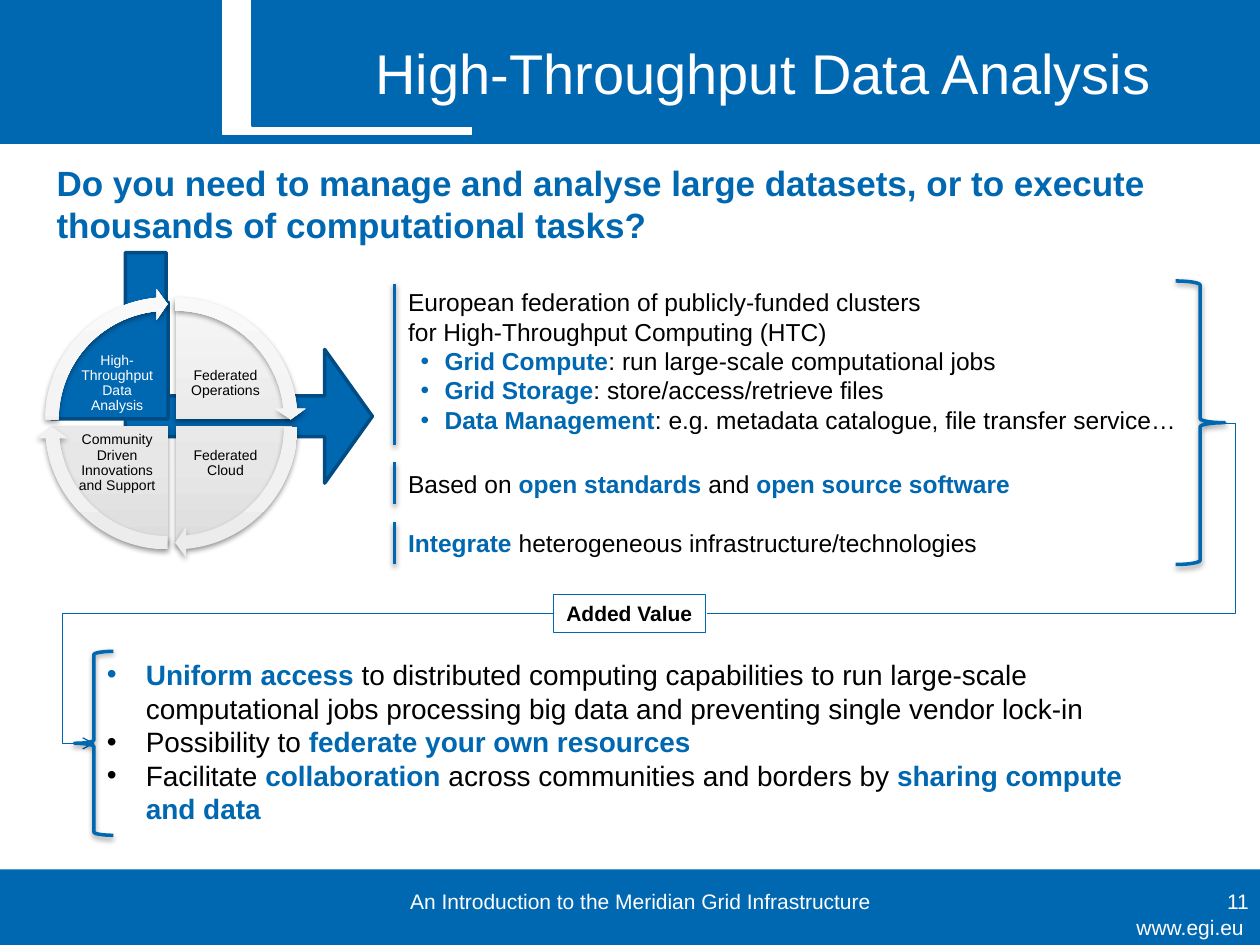
"""Build the High-Throughput Data Analysis slide."""
import copy

import pptx
import pptx.dml.color
import pptx.enum.shapes
import pptx.enum.text
import pptx.oxml.ns
import pptx.util
from lxml import etree

Inches, Pt = pptx.util.Inches, pptx.util.Pt
RGBColor = pptx.dml.color.RGBColor
Shape = pptx.enum.shapes.MSO_SHAPE
Connector = pptx.enum.shapes.MSO_CONNECTOR
Align, Anchor = pptx.enum.text.PP_ALIGN, pptx.enum.text.MSO_ANCHOR
qn = pptx.oxml.ns.qn

BLUE = RGBColor(0x00, 0x67, 0xB1)
LINK_BLUE = RGBColor(0x00, 0x65, 0xAD)
DARK_BLUE = RGBColor(0x00, 0x4C, 0x83)
WHITE = RGBColor(0xFF, 0xFF, 0xFF)
BLACK = RGBColor(0, 0, 0)
PIE_GREYS = [(0, RGBColor(0xDD, 0xDD, 0xDD)), (0.35, RGBColor(0xE7, 0xE7, 0xE7)), (1, RGBColor(0xF6, 0xF6, 0xF6))]
ARROW_GREYS = [(0, RGBColor(0xEC, 0xEC, 0xEC)), (0.35, RGBColor(0xF1, 0xF1, 0xF1)), (1, RGBColor(0xF9, 0xF9, 0xF9))]

TITLE = "High-Throughput Data Analysis"
QUESTION = "**Do you need to manage and analyse large datasets, or to execute thousands of computational tasks?**"
FEATURES = [
    (2.23, 1.28, (2.25, 3.53), [
        "European federation of publicly-funded clusters",
        "for High-Throughput Computing (HTC)",
        "• **Grid Compute**: run large-scale computational jobs",
        "• **Grid Storage**: store/access/retrieve files",
        "• **Data Management**: e.g. metadata catalogue, file transfer service…",
    ]),
    (3.67, 0.34, (3.67, 4.0), ["Based on **open standards** and **open source software**"]),
    (4.14, 0.34, (4.14, 4.48), ["**Integrate **heterogeneous infrastructure/technologies"]),
]
VALUES = [
    "• **Uniform access **to distributed computing capabilities to run large-scale "
    "computational jobs processing big data and preventing single vendor lock-in",
    "• Possibility to **federate your own resources**",
    "• Facilitate **collaboration **across communities and borders by **sharing compute and data**",
]
FOOTERS = [
    ((8.39, 7.2, 1.58, 0.31), "www.egi.eu", Align.RIGHT),
    ((7.68, 6.95, 2.33, 0.4), "11", Align.RIGHT),
    ((2.8, 6.95, 4.57, 0.4), "An Introduction to the Meridian Grid Infrastructure", Align.CENTER),
]
QUADRANTS = [
    ("Federated Operations", 1, 0),
    ("Federated Cloud", 1, 1),
    ("Community Driven Innovations and Support", 0, 1),
    ("High-Throughput Data Analysis", 0, 0),
]
BRACES = [
    (Shape.RIGHT_BRACE, (9.33, 2.23, 0.39, 2.25)),
    (Shape.LEFT_BRACE, (0.59, 5.17, 0.31, 1.46)),
]
QUARTER, FULL_TURN = 54, 216


def set_shadow(item, visible=True):
    properties = item._element.spPr
    effects = properties.find(qn("a:effectLst"))
    if effects is None:
        effects = etree.SubElement(properties, qn("a:effectLst"))
    if visible:
        outer = etree.SubElement(effects, qn("a:outerShdw"), blurRad="40000", dist="20000",
                                 dir="5400000", rotWithShape="0")
        color = etree.SubElement(outer, qn("a:srgbClr"), val="000000")
        etree.SubElement(color, qn("a:alpha"), val="38000")


def style(shape, fill=None, line=None, width=0.75):
    shape.shadow.inherit = False
    if fill is None:
        shape.fill.background()
    elif isinstance(fill, list):
        shape.fill.gradient()
        shape.fill.gradient_angle = 90
        first = shape._element.spPr.find(".//" + qn("a:gs"))
        first.addnext(copy.deepcopy(first))
        for stop, (position, color) in zip(shape.fill.gradient_stops, fill):
            stop.position, stop.color.rgb = position, color
    else:
        shape.fill.solid()
        shape.fill.fore_color.rgb = fill
    if line is None:
        shape.line.fill.background()
    else:
        shape.line.color.rgb, shape.line.width = line, Pt(width)
    return shape


def add_shape(page, kind, place, fill=None, line=None, width=0.75, adjustments=()):
    shape = page.shapes.add_shape(kind, *map(Inches, place))
    for index, value in enumerate(adjustments):
        shape.adjustments[index] = value
    return style(shape, fill, line, width)


def write(box, paragraphs, size, color=BLACK, align=Align.LEFT, anchor=Anchor.TOP,
          indent=0.0, hang=0.0, spacing=None, margin=None, wrap=True):
    frame = box.text_frame
    frame.word_wrap, frame.vertical_anchor = wrap, anchor
    if margin is not None:
        frame.margin_left = frame.margin_right = frame.margin_top = frame.margin_bottom = Inches(margin)
    for index, text in enumerate(paragraphs):
        para = frame.add_paragraph() if index else frame.paragraphs[0]
        para.alignment, para.line_spacing = align, spacing
        if text.startswith("• "):
            text = text[2:]
            properties = para._p.get_or_add_pPr()
            properties.set("marL", str(Inches(indent)))
            properties.set("indent", str(-Inches(hang)))
            etree.SubElement(properties, qn("a:buFont"), typeface="Arial")
            etree.SubElement(properties, qn("a:buChar"), char="•")
        for part, words in enumerate(text.split("**")):
            if words:
                span = para.add_run()
                span.text = words
                span.font.name, span.font.size = "Arial", Pt(size)
                span.font.bold = part % 2 == 1
                span.font.color.rgb = BLUE if part % 2 else color


def add_text(page, place, paragraphs, size, **options):
    write(page.shapes.add_textbox(*map(Inches, place)), paragraphs, size, **options)


def add_line(page, start, end, color, width, bend=None):
    kind = Connector.STRAIGHT if bend is None else Connector.ELBOW
    line = page.shapes.add_connector(kind, *map(Inches, start + end))
    line.line.color.rgb, line.line.width = color, Pt(width)
    set_shadow(line, bend is None)
    if bend is not None:
        guides = line._element.spPr.find(qn("a:prstGeom")).get_or_add_avLst()
        etree.SubElement(guides, qn("a:gd"), name="adj1", fmla=f"val {round(bend * 100000)}")
    return line


def add_header(page):
    add_shape(page, Shape.RECTANGLE, (0, 6.9, 10, 0.6), BLUE)
    add_shape(page, Shape.RECTANGLE, (0, 0, 10, 1.14), BLUE, BLUE)
    left, right, bottom, crest = 1.77, 3.74, 1.07, 2.56
    add_shape(page, Shape.RECTANGLE, (left, 0, right - left, bottom), WHITE, WHITE)
    steps = [number / 40 for number in range(1, 41)]
    curve = [
        ((1 - t) ** 3 * left + 3 * (1 - t) ** 2 * t * crest + 3 * (1 - t) * t ** 2 * left + t ** 3 * crest,
         bottom * ((1 - t) ** 3 + 3 * (1 - t) ** 2 * t))
        for t in steps
    ]
    outline = page.shapes.build_freeform(right, 0, scale=Inches(1))
    outline.add_line_segments([(right, bottom), (left, bottom)] + curve)
    style(outline.convert_to_shape(), BLUE, BLUE)
    title = page.shapes.title
    title.left, title.top, title.width, title.height = map(Inches, (2.32, 0.13, 7.48, 0.95))
    write(title, [TITLE], 32, color=WHITE, align=Align.CENTER, anchor=Anchor.MIDDLE, spacing=0.9)
    page.shapes._spTree.append(title._element)


def add_cycle(page):
    arrow = add_shape(page, Shape.BENT_UP_ARROW, (1.06, 1.94, 1.83, 1.96), BLUE, DARK_BLUE, 2, (0.177, 0.29, 0.207))
    arrow.rotation = 90
    starts = [(162 + QUARTER * index) % FULL_TURN for index in range(len(QUADRANTS))]
    for start, (label, column, row) in zip(starts, QUADRANTS):
        active = label == TITLE
        pie = add_shape(page, Shape.PIE, (0.41 + 0.06 * column, 2.4 + 0.06 * row, 1.85, 1.85),
                        BLUE if active else PIE_GREYS, DARK_BLUE if active else None, 2,
                        (start, (start + QUARTER) % FULL_TURN))
        set_shadow(pie, not active)
        add_text(page, (0.59 + 0.86 * column, 2.79 + 0.63 * row, 0.68, 0.51), [label], 8,
                 color=WHITE if active else BLACK, align=Align.CENTER, anchor=Anchor.MIDDLE,
                 spacing=0.9, margin=0.01)
    for start, (label, column, row) in zip(starts, QUADRANTS):
        set_shadow(add_shape(page, Shape.CIRCULAR_ARROW, (0.29 + 0.06 * column, 2.29 + 0.06 * row, 2.08, 2.08),
                             ARROW_GREYS, adjustments=(0.051, 3.275, start + 50.725, start, 0.059)))


def main():
    deck = pptx.Presentation()
    deck.slide_width, deck.slide_height = Inches(10), Inches(7.5)
    page = deck.slides.add_slide(deck.slide_layouts[5])
    add_header(page)
    for place, text, align in FOOTERS:
        add_text(page, place, [text], 12, color=WHITE, align=align, anchor=Anchor.MIDDLE)
    add_text(page, (0.35, 1.23, 9.21, 0.77), [QUESTION], 20)
    for top, height, (bar_top, bar_bottom), lines in FEATURES:
        add_text(page, (3.14, top, 6.42, height), lines, 14, indent=0.29, hang=0.19)
        add_line(page, (3.13, bar_top), (3.13, bar_bottom), BLUE, 2)
    badge = add_shape(page, Shape.RECTANGLE, (4.39, 4.72, 1.21, 0.3), WHITE, BLUE, 0.25)
    write(badge, ["Added Value"], 12, align=Align.CENTER, anchor=Anchor.MIDDLE, wrap=False)
    badge.text_frame.paragraphs[0].runs[0].font.bold = True
    add_text(page, (0.75, 5.17, 8.66, 1.46), VALUES, 16, indent=0.31, hang=0.31)
    link = add_line(page, (4.39, 4.87), (0.75, 5.9), LINK_BLUE, 0.75, 1.069)
    etree.SubElement(link.line._get_or_add_ln(), qn("a:tailEnd"), type="arrow")
    add_cycle(page)
    for kind, place in BRACES:
        set_shadow(add_shape(page, kind, place, line=BLUE, width=2))
    add_line(page, (9.72, 3.36), (5.61, 4.87), LINK_BLUE, 0.75, -0.021)
    deck.save("out.pptx")


if __name__ == "__main__":
    main()
